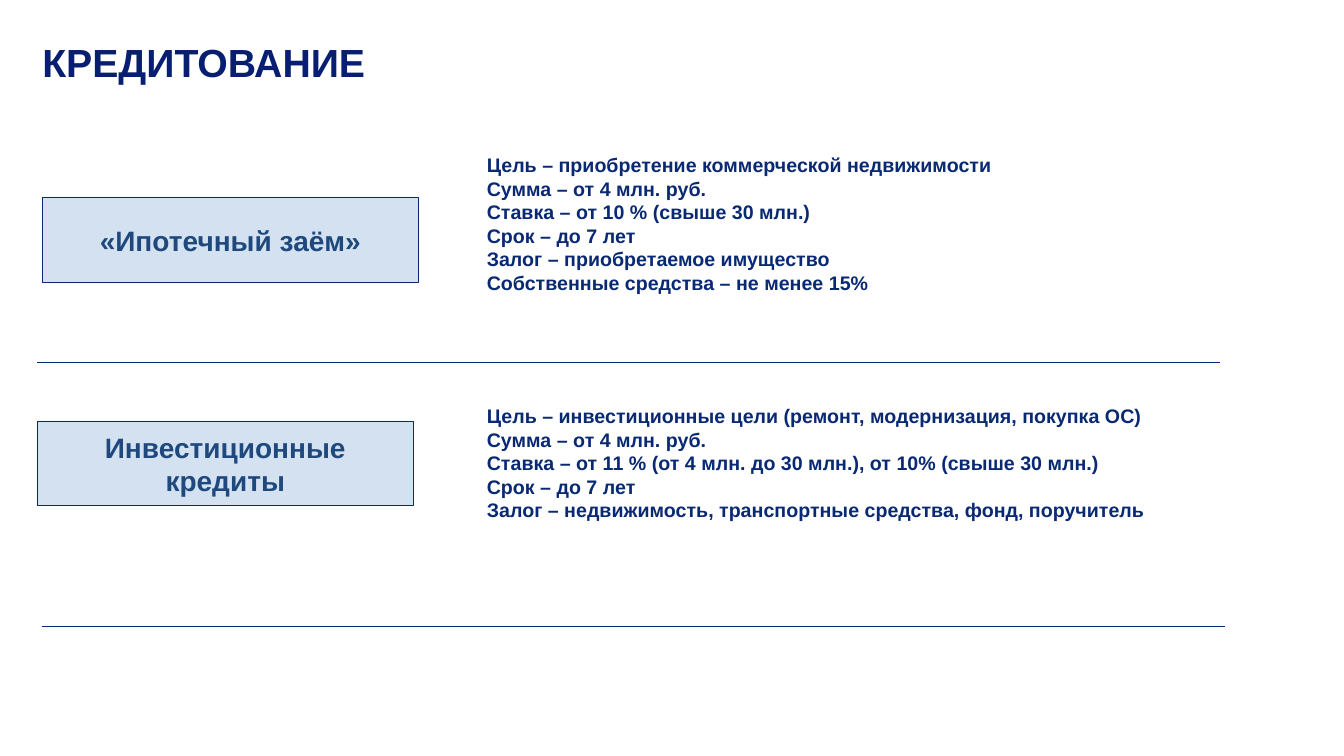
import pptx
import pptx.dml.color
import pptx.enum.shapes
import pptx.enum.text
import pptx.oxml.ns
import pptx.util
from lxml import etree
from pptx.util import Inches

NAVY = "0A2973"
ALIGN = pptx.enum.text.PP_ALIGN
ANCHOR = pptx.enum.text.MSO_ANCHOR


def rgb(color):
    return pptx.dml.color.RGBColor.from_string(color)


def format_text(tf, size, color, align):
    tf.word_wrap = True
    for p in tf.paragraphs:
        p.alignment = align
        for r in p.runs:
            r.font.name = "Arial"
            r.font.size = pptx.util.Pt(size)
            r.font.bold = True
            r.font.color.rgb = rgb(color)


prs = pptx.Presentation()
prs.slide_width = Inches(13.33)
prs.slide_height = Inches(7.5)
s = prs.slides.add_slide(prs.slide_layouts[5])

title = s.shapes.title
title.left, title.top = Inches(0.42), Inches(0.43)
title.width, title.height = Inches(9.41), Inches(0.44)
tf = title.text_frame
tf.text = "КРЕДИТОВАНИЕ"
tf.margin_left = tf.margin_top = tf.margin_right = tf.margin_bottom = 0
tf.vertical_anchor = ANCHOR.TOP
tf.auto_size = pptx.enum.text.MSO_AUTO_SIZE.NONE
tf.paragraphs[0].line_spacing = 0.9
format_text(tf, 28, "081E70", ALIGN.LEFT)

# name, box left, box top, terms top, terms width, terms height, rule left, rule y, terms
loans = [
    ("«Ипотечный заём»", 0.42, 1.96, 1.47, 6.67, 1.51, 0.37, 3.6, [
        "Цель – приобретение коммерческой недвижимости",
        "Сумма – от 4 млн. руб.",
        "Ставка – от 10 % (свыше 30 млн.)",
        "Срок – до 7 лет",
        "Залог – приобретаемое имущество",
        "Собственные средства – не менее 15%",
    ]),
    ("Инвестиционные кредиты", 0.37, 4.18, 3.96, 7.19, 1.28, 0.42, 6.22, [
        "Цель – инвестиционные цели (ремонт, модернизация, покупка ОС)",
        "Сумма – от 4 млн. руб.",
        "Ставка – от 11 % (от 4 млн. до 30 млн.), от 10% (свыше 30 млн.)",
        "Срок – до 7 лет",
        "Залог – недвижимость, транспортные средства, фонд, поручитель",
    ]),
]

for name, box_x, box_y, terms_y, terms_w, terms_h, rule_x, rule_y, terms in loans:
    sp = s.shapes.add_shape(pptx.enum.shapes.MSO_SHAPE.RECTANGLE, Inches(box_x),
                            Inches(box_y), Inches(3.73), Inches(0.84))
    sp.shadow.inherit = False
    sp.fill.solid()
    sp.fill.fore_color.rgb = rgb("D4E1F0")
    sp.line.color.rgb = rgb(NAVY)
    sp.line.width = pptx.util.Pt(0.75)
    sp.text_frame.text = name
    sp.text_frame.vertical_anchor = ANCHOR.MIDDLE
    format_text(sp.text_frame, 20, "1F497D", ALIGN.CENTER)

    tb = s.shapes.add_textbox(Inches(4.73), Inches(terms_y), Inches(terms_w), Inches(terms_h))
    tb.text_frame.text = "\n".join(terms)
    format_text(tb.text_frame, 14, NAVY, ALIGN.JUSTIFY)

    rule = s.shapes.add_connector(pptx.enum.shapes.MSO_CONNECTOR.STRAIGHT, Inches(rule_x),
                                  Inches(rule_y), Inches(rule_x + 11.73), Inches(rule_y))
    rule.line.color.rgb = rgb(NAVY)
    rule.line.width = pptx.util.Pt(0.75)
    etree.SubElement(rule.element.spPr, pptx.oxml.ns.qn("a:effectLst"))

prs.save("out.pptx")
